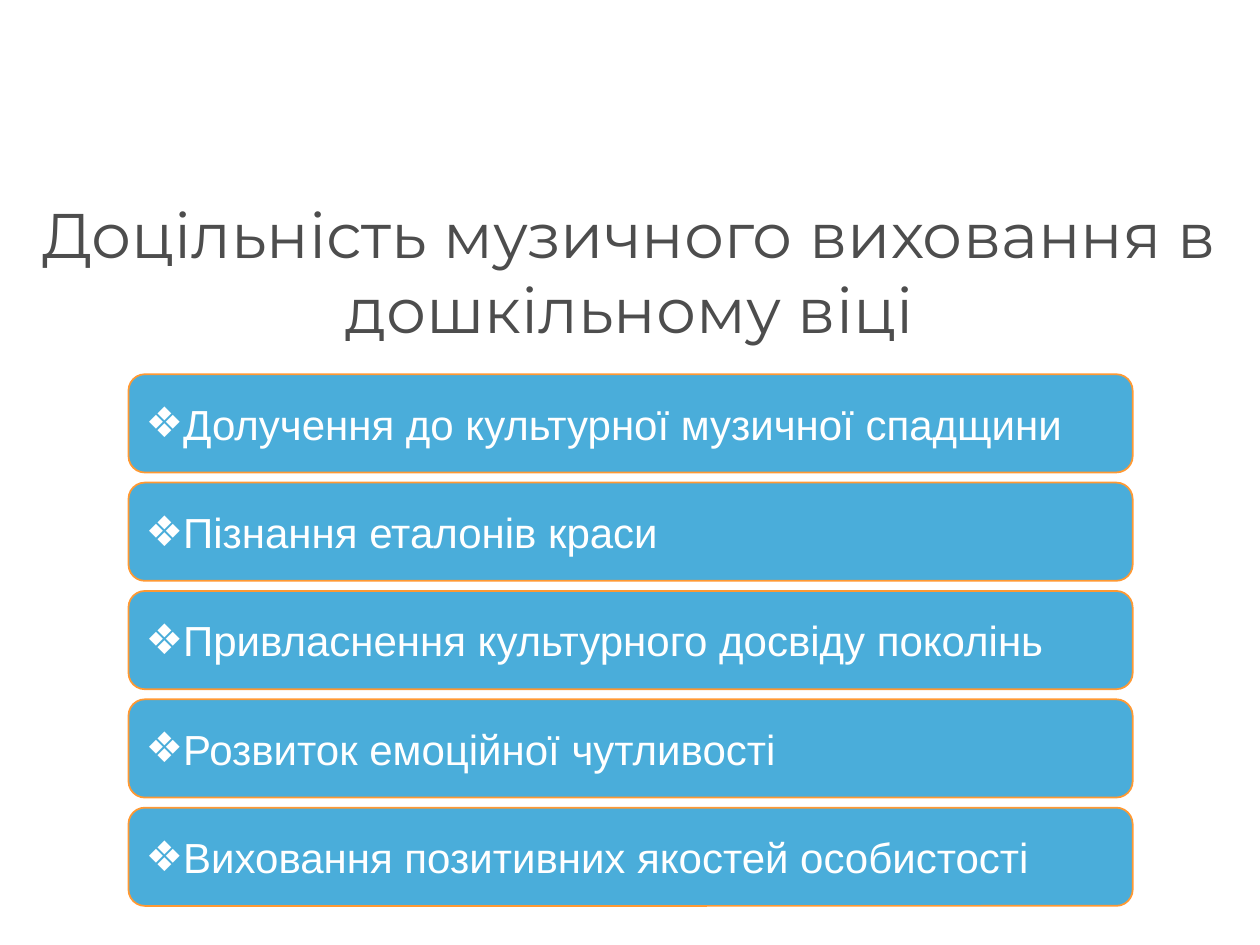
from pptx import Presentation
from pptx.dml.color import RGBColor
from pptx.enum.shapes import MSO_SHAPE as Shape
from pptx.enum.text import MSO_ANCHOR as Anchor, MSO_AUTO_SIZE as AutoSize, PP_ALIGN as Align
from pptx.oxml.ns import qn
from pptx.util import Inches, Pt
from lxml.etree import SubElement

HEADING = "Доцільність музичного виховання в дошкільному віці"
BENEFITS = [
    "Долучення до культурної музичної спадщини",
    "Пізнання еталонів краси",
    "Привласнення культурного досвіду поколінь",
    "Розвиток емоційної чутливості",
    "Виховання позитивних якостей особистості",
]
BAR_LEFT, BAR_TOP, BAR_WIDTH, BAR_HEIGHT = 1.02, 2.97, 7.97, 0.78
BAR_PITCH = 0.86


def color(value):
    return RGBColor.from_string(value)


def write(frame, text, *, size, font, ink, align, bullet=None):
    """Fill a text frame with one formatted paragraph."""
    frame.word_wrap = True
    frame.auto_size = AutoSize.NONE
    frame.vertical_anchor = Anchor.MIDDLE
    frame.margin_left = frame.margin_right = Inches(0.1)
    frame.text = text
    paragraph = frame.paragraphs[0]
    paragraph.alignment = align
    if bullet:
        properties = paragraph._p.get_or_add_pPr()
        SubElement(properties, qn("a:buFont")).set("typeface", "Arial")
        SubElement(properties, qn("a:buChar")).set("char", bullet)
    style = paragraph.runs[0].font
    style.size, style.name = Pt(size), font
    style.color.rgb = color(ink)


def add_bar(slide, row, benefit):
    bar = slide.shapes.add_shape(
        Shape.ROUNDED_RECTANGLE, Inches(BAR_LEFT), Inches(BAR_TOP + row * BAR_PITCH),
        Inches(BAR_WIDTH), Inches(BAR_HEIGHT))
    bar.shadow.inherit = False
    bar.fill.solid()
    bar.fill.fore_color.rgb = color("4AADDA")
    bar.line.color.rgb = color("FF9933")
    bar.line.width = Pt(1)
    write(bar.text_frame, benefit, size=24, font="Arial", ink="FFFFFF",
          align=Align.LEFT, bullet="❖")


def main():
    deck = Presentation()
    deck.slide_width, deck.slide_height = Inches(10), Inches(7.5)
    slide = deck.slides.add_slide(deck.slide_layouts[5])
    heading = slide.shapes.title
    heading.left, heading.top = Inches(0.23), Inches(1.64)
    heading.width, heading.height = Inches(9.53), Inches(1.02)
    write(heading.text_frame, HEADING, size=36, font="Montserrat", ink="4D4D4D",
          align=Align.CENTER)
    for row, benefit in enumerate(BENEFITS):
        add_bar(slide, row, benefit)
    deck.save("out.pptx")


if __name__ == "__main__":
    main()
